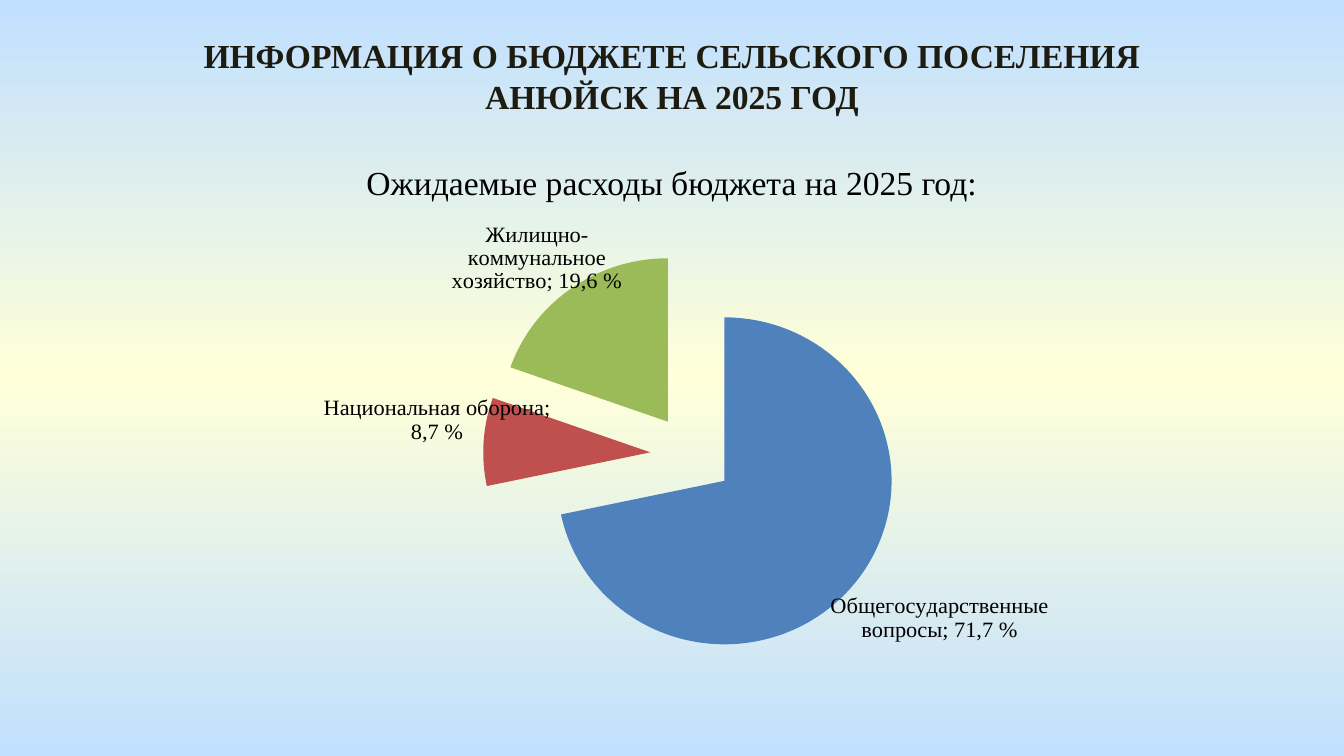
import copy
from dataclasses import dataclass

import pptx
import pptx.chart.data
import pptx.dml.color
import pptx.enum.chart
import pptx.enum.text
import pptx.oxml
import pptx.oxml.ns
import pptx.util

qn = pptx.oxml.ns.qn
RGB = pptx.dml.color.RGBColor.from_string


@dataclass(frozen=True)
class Theme:
    font: str = "Times New Roman"
    chart_font: str = "Calibri"
    heading_size: int = 18
    label_size: int = 12
    title_color: str = "1E1C11"
    text_color: str = "000000"
    gradient: tuple = ((0, "C1E0FF"), (0.5, "FFFFD9"), (1, "C1E0FF"))


@dataclass(frozen=True)
class Box:
    """An area given in percent of what holds it."""
    left: float
    top: float
    width: float
    height: float

    def on_slide(self) -> tuple:
        return (int(self.left * WIDTH / 100), int(self.top * HEIGHT / 100),
                int(self.width * WIDTH / 100), int(self.height * HEIGHT / 100))


@dataclass(frozen=True)
class Expense:
    """A budget line; its label shift is in percent of the chart's size."""
    name: str
    share: float
    color: str
    label_shift: tuple

    @property
    def label(self) -> str:
        percent = f"{self.share * 100:.1f}".replace(".", ",")
        return f"{self.name}; {percent} %"


THEME = Theme()
WIDTH = pptx.util.Inches(10)
HEIGHT = WIDTH * 9 // 16
EXPLOSION = 25
TITLE_BOX = Box(9.05, 3.8, 81.9, 12.6)
SUBTITLE_BOX = Box(12.8, 20.6, 74.4, 7.1)
CHART_BOX = Box(7.2, 28.05, 85.6, 67.9)
PLOT_BOX = Box(9.8, 5.5, 83.9, 81.4)
EXPENSES = (
    Expense("Общегосударственные вопросы", 0.717, "4F81BD", (-2.6, 1.2)),
    Expense("Национальная оборона", 0.087, "C0504D", (6.5, -4.2)),
    Expense("Жилищно-коммунальное хозяйство", 0.196, "9BBB59", (4.8, 1.1)),
)


def chart_element(tag: str, **values):
    """Build a chart element whose children each carry one value."""
    element = pptx.oxml.parse_xml(
        f'<c:{tag} xmlns:c="{pptx.oxml.ns.nsuri("c")}"/>')
    for name, value in values.items():
        element.append(
            element.makeelement(qn(f"c:{name}"), {"val": str(value)}))
    return element


def manual_layout(**values):
    layout = chart_element("layout")
    layout.append(chart_element("manualLayout", **values))
    return layout


def style_font(font, size: int, color: str, name: str = THEME.font,
               bold: bool = False) -> None:
    font.name = name
    font.size = pptx.util.Pt(size)
    font.bold = bold
    font.color.rgb = RGB(color)


def paint_background(slide) -> None:
    fill = slide.background.fill
    fill.gradient()
    fill.gradient_angle = 90
    first_stop = slide.element.find(".//" + qn("a:gs"))
    first_stop.addnext(copy.deepcopy(first_stop))
    for stop, (position, color) in zip(fill.gradient_stops, THEME.gradient):
        stop.position = position
        stop.color.rgb = RGB(color)


def add_heading(slide, box: Box, text: str, color: str, bold: bool) -> None:
    frame = slide.shapes.add_textbox(*box.on_slide()).text_frame
    frame.word_wrap = True
    frame.auto_size = pptx.enum.text.MSO_AUTO_SIZE.SHAPE_TO_FIT_TEXT
    paragraph = frame.paragraphs[0]
    paragraph.alignment = pptx.enum.text.PP_ALIGN.CENTER
    run = paragraph.add_run()
    run.text = text
    style_font(run.font, THEME.heading_size, color, bold=bold)


def add_slice_label(point, expense: Expense) -> None:
    label = point.data_label
    frame = label.text_frame
    frame.word_wrap = True
    run = frame.paragraphs[0].add_run()
    run.text = expense.label
    style_font(run.font, THEME.label_size, THEME.text_color)
    label.position = pptx.enum.chart.XL_LABEL_POSITION.OUTSIDE_END


def add_expense_pie(slide) -> None:
    data = pptx.chart.data.CategoryChartData(number_format="0.0%")
    data.categories = [expense.name for expense in EXPENSES]
    data.add_series("Series 1", [expense.share for expense in EXPENSES])
    chart = slide.shapes.add_chart(
        pptx.enum.chart.XL_CHART_TYPE.PIE, *CHART_BOX.on_slide(), data).chart
    chart.has_title = False
    chart.has_legend = False
    style_font(chart.font, THEME.heading_size, THEME.text_color,
               THEME.chart_font)

    plot = chart.plots[0]
    plot.vary_by_categories = True
    series = plot.series[0]
    labels = series.data_labels
    labels.show_value = True
    labels.show_category_name = True
    labels.number_format = "0.0%"
    labels.number_format_is_linked = False
    style_font(labels.font, THEME.label_size, THEME.text_color)

    for index, expense in enumerate(EXPENSES):
        point = series.points[index]
        point.format.fill.solid()
        point.format.fill.fore_color.rgb = RGB(expense.color)
        point.format.line.fill.background()
        add_slice_label(point, expense)

    series_element = series._element
    for label, expense in zip(series_element.iter(qn("c:dLbl")), EXPENSES):
        x, y = expense.label_shift
        label.find(qn("c:idx")).addnext(manual_layout(x=x / 100, y=y / 100))
        label.find(qn("c:showCatName")).set("val", "1")

    label_group = series_element.find(qn("c:dLbls"))
    for leader_lines in label_group.findall(qn("c:showLeaderLines")):
        label_group.remove(leader_lines)
    label_group.extend(chart_element("dLbls", showLeaderLines=0))

    explosion = chart_element("explosion")
    explosion.set("val", str(EXPLOSION))
    series_element.find(qn("c:dPt")).addprevious(explosion)

    plot_area = chart._chartSpace.find(".//" + qn("c:plotArea"))
    for layout in plot_area.findall(qn("c:layout")):
        plot_area.remove(layout)
    plot_area.insert(0, manual_layout(
        layoutTarget="inner", xMode="edge", yMode="edge",
        x=PLOT_BOX.left / 100, y=PLOT_BOX.top / 100,
        w=PLOT_BOX.width / 100, h=PLOT_BOX.height / 100))


def main() -> None:
    presentation = pptx.Presentation()
    presentation.slide_width = WIDTH
    presentation.slide_height = HEIGHT
    slide = presentation.slides.add_slide(presentation.slide_layouts[6])
    paint_background(slide)
    add_heading(slide, SUBTITLE_BOX, "Ожидаемые расходы бюджета на 2025 год:",
                THEME.text_color, bold=False)
    add_expense_pie(slide)
    add_heading(slide, TITLE_BOX,
                "ИНФОРМАЦИЯ О БЮДЖЕТЕ СЕЛЬСКОГО ПОСЕЛЕНИЯ АНЮЙСК НА 2025 ГОД",
                THEME.title_color, bold=True)
    presentation.save("out.pptx")


if __name__ == "__main__":
    main()
